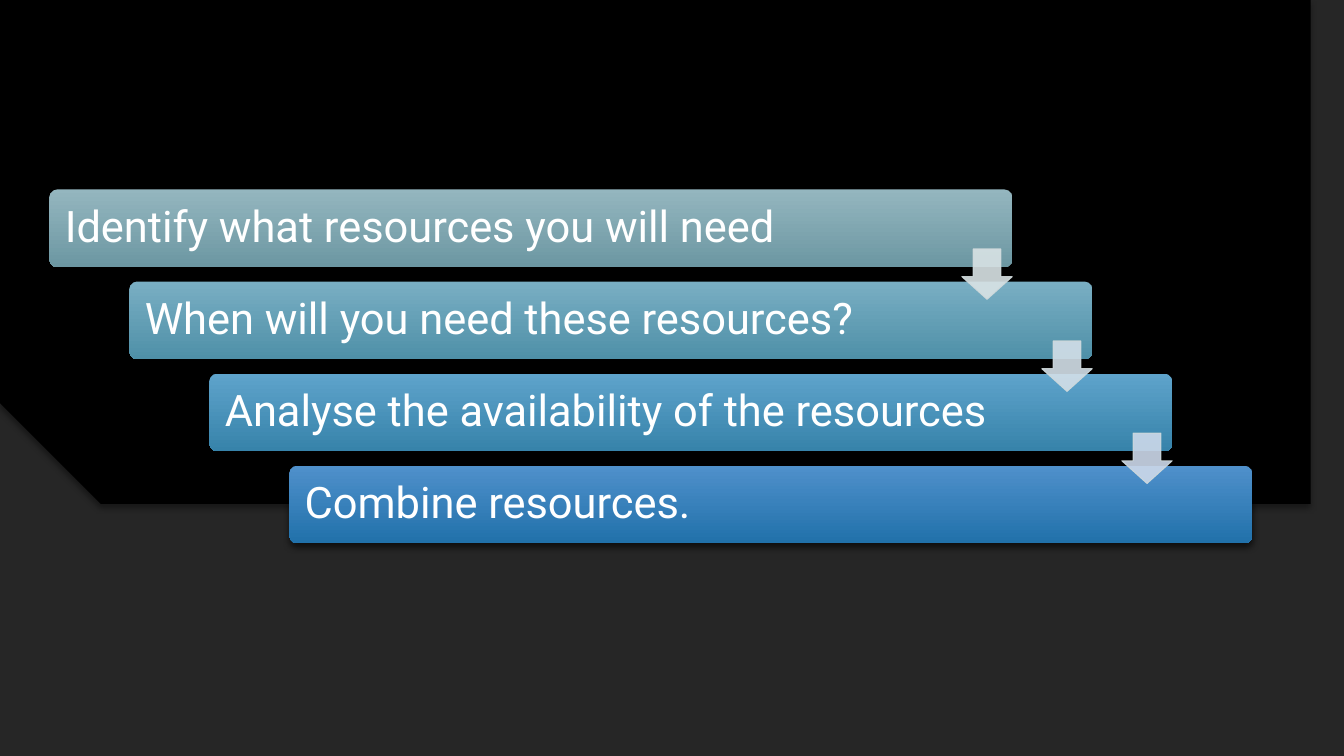
import lxml.etree
import pptx
import pptx.dml.color
import pptx.enum.shapes
import pptx.enum.text
import pptx.oxml.ns
import pptx.util

Inches = pptx.util.Inches
Pt = pptx.util.Pt
RGBColor = pptx.dml.color.RGBColor
SHAPES = pptx.enum.shapes.MSO_SHAPE

BLACK = RGBColor(0x00, 0x00, 0x00)
CHARCOAL = RGBColor(0x26, 0x26, 0x26)
WHITE = RGBColor(0xFF, 0xFF, 0xFF)
ARROW_EDGE = RGBColor(0xCF, 0xD9, 0xDB)
STEPS = [
    ("Identify what resources you will need", RGBColor(0x94, 0xB6, 0xBF), RGBColor(0x6C, 0x97, 0xA2)),
    ("When will you need these resources?", RGBColor(0x79, 0xAE, 0xC3), RGBColor(0x4F, 0x90, 0xA8)),
    ("Analyse the availability of the resources", RGBColor(0x5E, 0xA3, 0xCB), RGBColor(0x37, 0x83, 0xAA)),
    ("Combine resources.", RGBColor(0x4F, 0x90, 0xCB), RGBColor(0x21, 0x71, 0xAA)),
]
ARROW_FILLS = [RGBColor(0xD9, 0xE3, 0xE5), RGBColor(0xD3, 0xDF, 0xE8), RGBColor(0xCD, 0xD9, 0xEA)]

PAGE_WIDTH, PAGE_HEIGHT = 13.33, 7.5
STEP_WIDTH, STEP_HEIGHT = 9.55, 0.77
ARROW_SIZE = 0.5


def add_child(parent, tag, **attributes):
    """Append a DrawingML element and return it."""
    child = lxml.etree.SubElement(parent, pptx.oxml.ns.qn(tag))
    for name, value in attributes.items():
        child.set(name, str(value))
    return child


def add_shadow(shape, blur, distance, opacity):
    """Give a shape a black shadow that falls straight down."""
    effects = shape._element.spPr.find(pptx.oxml.ns.qn("a:effectLst"))
    shadow = add_child(effects, "a:outerShdw", blurRad=Pt(blur), dist=Pt(distance),
                       dir=90 * 60000, algn="ctr", rotWithShape=0)
    color = add_child(shadow, "a:srgbClr", val=BLACK)
    add_child(color, "a:alpha", val=opacity * 1000)


def add_preset(page, kind, left, top, width, height):
    """Add a preset shape with neither outline nor shadow."""
    shape = page.shapes.add_shape(kind, Inches(left), Inches(top), Inches(width), Inches(height))
    shape.line.fill.background()
    shape.shadow.inherit = False
    return shape


def bezier_points(start, first, second, end, count=24):
    """Return points along a cubic curve, without its start."""
    points = []
    for index in range(1, count + 1):
        t = index / count
        weights = ((1 - t) ** 3, 3 * t * (1 - t) ** 2, 3 * t ** 2 * (1 - t), t ** 3)
        points.append(tuple(sum(weight * point[axis] for weight, point in
                                zip(weights, (start, first, second, end))) for axis in (0, 1)))
    return points


def add_backdrop(page, width, height):
    """Draw the charcoal floor and the black area with a curved lower edge."""
    page.background.fill.solid()
    page.background.fill.fore_color.rgb = BLACK
    floor = add_preset(page, SHAPES.RECTANGLE, 0, 0, width, height)
    floor.fill.solid()
    floor.fill.fore_color.rgb = CHARCOAL

    right, bottom, left = (12.8, 4.51), (6.66, 4.99), (0.52, 4.51)
    outline = [(width, 0), (width, 4.42), right]
    outline += bezier_points(right, (10.89, 4.82), (8.82, 4.99), bottom)
    outline += bezier_points(bottom, (4.5, 4.99), (2.43, 4.82), left)
    outline.append((0, 4.42))
    builder = page.shapes.build_freeform(0, 0, scale=Inches(1))
    builder.add_line_segments(outline, close=True)
    curtain = builder.convert_to_shape()
    curtain.fill.solid()
    curtain.fill.fore_color.rgb = BLACK
    curtain.line.fill.background()
    curtain.shadow.inherit = False
    add_shadow(curtain, blur=4, distance=3, opacity=40)


def write_text(shape, text, *, font, size, color):
    """Write one left-aligned paragraph in a shape."""
    frame = shape.text_frame
    frame.word_wrap = True
    frame.vertical_anchor = pptx.enum.text.MSO_ANCHOR.MIDDLE
    frame.margin_left = frame.margin_top = frame.margin_bottom = Inches(0.13)
    frame.margin_right = Inches(1)
    para = frame.paragraphs[0]
    para.alignment = pptx.enum.text.PP_ALIGN.LEFT
    para.line_spacing = 0.9
    para.space_after = Pt(11)
    span = para.add_run()
    span.text = text
    span.font.name = font
    span.font.size = Pt(size)
    span.font.color.rgb = color


def add_step(page, left, top, text, upper, lower):
    """Draw one rounded step with a vertical gradient."""
    step = add_preset(page, SHAPES.ROUNDED_RECTANGLE, left, top, STEP_WIDTH, STEP_HEIGHT)
    step.adjustments[0] = 0.1
    step.fill.gradient()
    step.fill.gradient_angle = 270
    for stop, color in zip(step.fill.gradient_stops, (upper, lower)):
        stop.color.rgb = color
    add_shadow(step, blur=5, distance=2, opacity=60)
    write_text(step, text, font="Roboto", size=31, color=WHITE)


def add_arrow(page, left, top, color):
    """Draw one slightly transparent arrow pointing down."""
    arrow = add_preset(page, SHAPES.DOWN_ARROW, left, top, ARROW_SIZE, ARROW_SIZE)
    arrow.adjustments[0] = 0.55
    arrow.adjustments[1] = 0.45
    arrow.fill.solid()
    arrow.fill.fore_color.rgb = color
    arrow.line.color.rgb = ARROW_EDGE
    arrow.line.width = Pt(0.75)
    for tint in arrow._element.spPr.iter(pptx.oxml.ns.qn("a:srgbClr")):
        add_child(tint, "a:alpha", val=90000)


def add_staircase(page, left, top, width, height):
    """Spread the steps diagonally over a box and join them with arrows."""
    shift = (width - STEP_WIDTH) / (len(STEPS) - 1)
    drop = (height - STEP_HEIGHT) / (len(STEPS) - 1)
    for index, (text, upper, lower) in enumerate(STEPS):
        add_step(page, left + index * shift, top + index * drop, text, upper, lower)
    for index, color in enumerate(ARROW_FILLS):
        add_arrow(page, left + index * shift + STEP_WIDTH - ARROW_SIZE,
                  top + index * drop + 0.59, color)


def main():
    """Build and save the deck."""
    deck = pptx.Presentation()
    deck.slide_width = Inches(PAGE_WIDTH)
    deck.slide_height = Inches(PAGE_HEIGHT)
    page = deck.slides.add_slide(deck.slide_layouts[6])
    add_backdrop(page, PAGE_WIDTH, PAGE_HEIGHT)
    add_staircase(page, 0.49, 1.88, 11.93, 3.51)
    deck.save("out.pptx")


if __name__ == "__main__":
    main()
